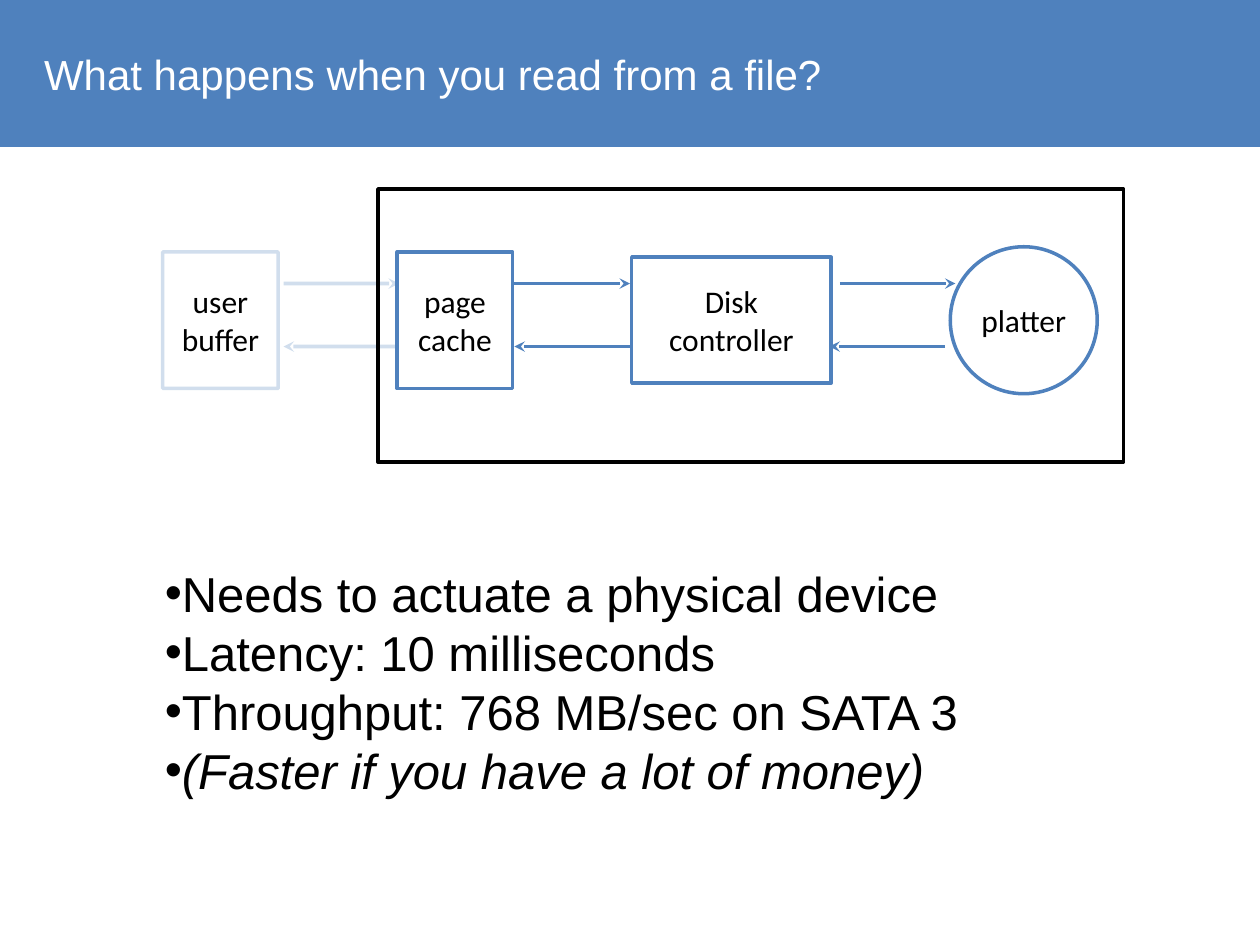
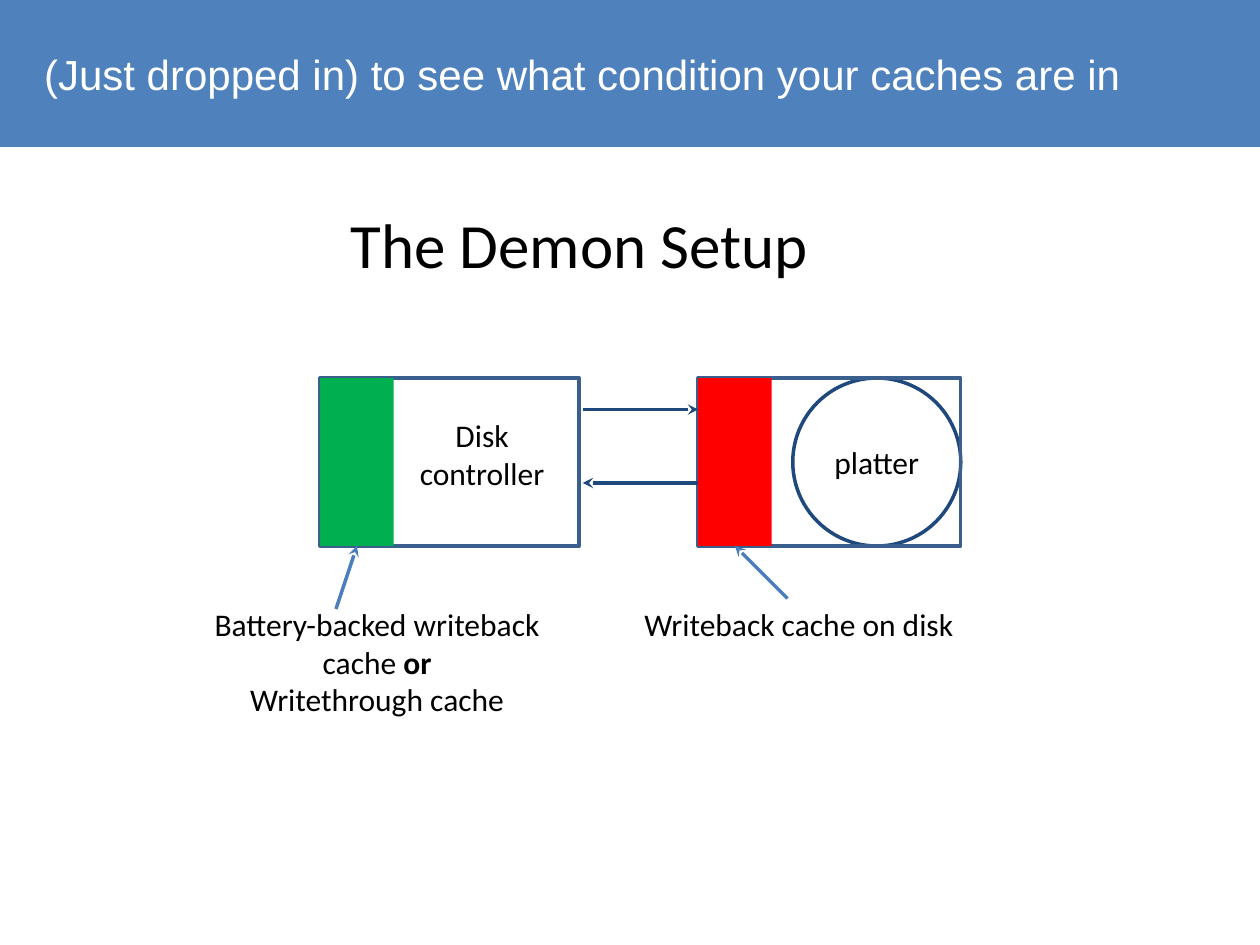
from pptx import Presentation
from pptx.dml.color import RGBColor
from pptx.enum.shapes import MSO_CONNECTOR, MSO_SHAPE
from pptx.enum.text import MSO_ANCHOR, MSO_AUTO_SIZE, PP_ALIGN
from pptx.oxml.ns import qn
from pptx.util import Pt
from lxml.etree import SubElement

BLUE, NAVY, EDGE, SKY = "4F81BD", "1F497D", "3A5F8C", "4B7EBC"
GREEN, RED, BLACK, WHITE = "00B050", "FF0000", "000000", "FFFFFF"


def color(code):
    return RGBColor.from_string(code)


class Deck:
    """Holds the shared style and the slide being built."""

    def setup(self):
        self.prs = Presentation()
        self.prs.slide_width, self.prs.slide_height = Pt(720), Pt(540)
        return self

    def page(self, layout, text, width):
        self.slide = self.prs.slides.add_slide(self.prs.slide_layouts[layout])
        self.shapes = self.slide.shapes
        band = self.box((0, 0, 720, 84), fill=BLUE)
        self.shapes.title.element.addprevious(band.element)
        self.place(self.shapes.title, (18, 24, width, 36))
        self.letter(self.shapes.title, [text], 24, "Arial", WHITE, PP_ALIGN.LEFT)

    def place(self, shape, area):
        shape.left, shape.top, shape.width, shape.height = map(Pt, area)

    def letter(self, shape, lines, size=18, face="Calibri", ink=BLACK,
               align=PP_ALIGN.CENTER):
        frame = shape.text_frame
        frame.word_wrap = False
        frame.auto_size = MSO_AUTO_SIZE.NONE
        for n, line in enumerate(lines):
            para = frame.add_paragraph() if n else frame.paragraphs[0]
            para.alignment = align
            font = para.font
            font.size, font.name = Pt(size), face
            font.color.rgb = color(ink)
            for k, part in enumerate(line.split("*")):
                if part:
                    run = para.add_run()
                    run.text = part
                    if k % 2:
                        run.font.bold = True
        return frame

    def stroke(self, shape, ink, alpha=None):
        shape.line.color.rgb = color(ink)
        shape.line.width = Pt(2)
        edge = shape.element.spPr.find(qn("a:ln"))
        if alpha:
            tint = edge.find(".//" + qn("a:srgbClr"))
            SubElement(tint, qn("a:alpha")).set("val", str(alpha * 1000))
        return edge

    def box(self, area, lines=(), ink=None, fill=None, alpha=None,
            kind=MSO_SHAPE.RECTANGLE):
        shape = self.shapes.add_shape(kind, *map(Pt, area))
        shape.shadow.inherit = False
        if fill:
            shape.fill.solid()
            shape.fill.fore_color.rgb = color(fill)
        else:
            shape.fill.background()
        if ink:
            self.stroke(shape, ink, alpha)
        else:
            shape.line.fill.background()
        if lines:
            self.letter(shape, lines).vertical_anchor = MSO_ANCHOR.MIDDLE
        return shape

    def disc(self, area, lines, ink):
        self.box(area, lines, ink, kind=MSO_SHAPE.OVAL)

    def label(self, area, lines, size=18):
        self.letter(self.shapes.add_textbox(*map(Pt, area)), lines, size)

    def arrow(self, x1, y1, x2, y2, ink, alpha=None):
        link = self.shapes.add_connector(
            MSO_CONNECTOR.STRAIGHT, Pt(x1), Pt(y1), Pt(x2), Pt(y2))
        edge = self.stroke(link, ink, alpha)
        SubElement(edge, qn("a:tailEnd")).set("type", "stealth")
        SubElement(link.element.spPr, qn("a:effectLst"))

    def bullets(self, area, lines):
        body = self.slide.placeholders[1]
        self.place(body, area)
        frame = self.letter(body, lines, 28, "Arial", align=PP_ALIGN.LEFT)
        for para in frame.paragraphs:
            para.space_before = Pt(0)
            para.line_spacing = Pt(33.8)
            props = para._p.get_or_add_pPr()
            props.set("marL", "0")
            props.set("indent", "0")
        return frame


def fetch(deck):
    deck.page(1, "What happens when you read from a file?", 464)
    deck.box((93, 144, 66, 78), ["user", "buffer"], BLUE, alpha=25)
    deck.box((227, 144, 66, 78), ["page", "cache"], BLUE)
    deck.box((361, 147, 114, 72), ["Disk", "controller"], BLUE)
    deck.disc((543, 141, 84, 84), ["platter"], BLUE)
    for out, back, alpha in ((162, 162, 25), (294, 294, None), (480, 474, None)):
        deck.arrow(out, 162, out + 66, 162, BLUE, alpha)
        deck.arrow(back + 66, 198, back, 198, BLUE, alpha)
    deck.box((216, 108, 426, 156), ink=BLACK)
    frame = deck.bullets((87, 318, 473, 143), [
        "Needs to actuate a physical device",
        "Latency: 10 milliseconds",
        "Throughput: 768 MB/sec on SATA 3",
        "(Faster if you have a lot of money)"])
    frame.paragraphs[-1].font.italic = True


def demon(deck):
    deck.page(5, "(Just dropped in) to see what condition your caches are in", 640)
    disk, drive, top, high = 183, 399, 216, 96
    deck.box((disk, top, 148, high), ink=EDGE)
    deck.label((232.5, 234, 86, 51), ["Disk", "controller"])
    deck.disc((453, top, high, high), ["platter"], NAVY)
    deck.box((drive, top, 150, high), ink=EDGE)
    for left, fill in ((disk, GREEN), (drive, RED)):
        deck.box((left, top, 42, high), fill=fill)
    deck.arrow(333, 234, drive, 234, NAVY)
    deck.arrow(drive, 276, 333, 276, NAVY)
    deck.arrow(192, 348, 204, top + high, SKY)
    deck.arrow(450, 342, 420, top + high, SKY)
    deck.label((114, 342, 203, 73), [
        "Battery-backed writeback", "cache *or*", "Writethrough cache"])
    deck.label((360, 342, 193, 29), ["Writeback cache on disk"])
    deck.label((192, 114, 278, 51), ["The Demon Setup"], 36)


def main():
    deck = Deck().setup()
    fetch(deck)
    demon(deck)
    deck.prs.save("out.pptx")


if __name__ == "__main__":
    main()
